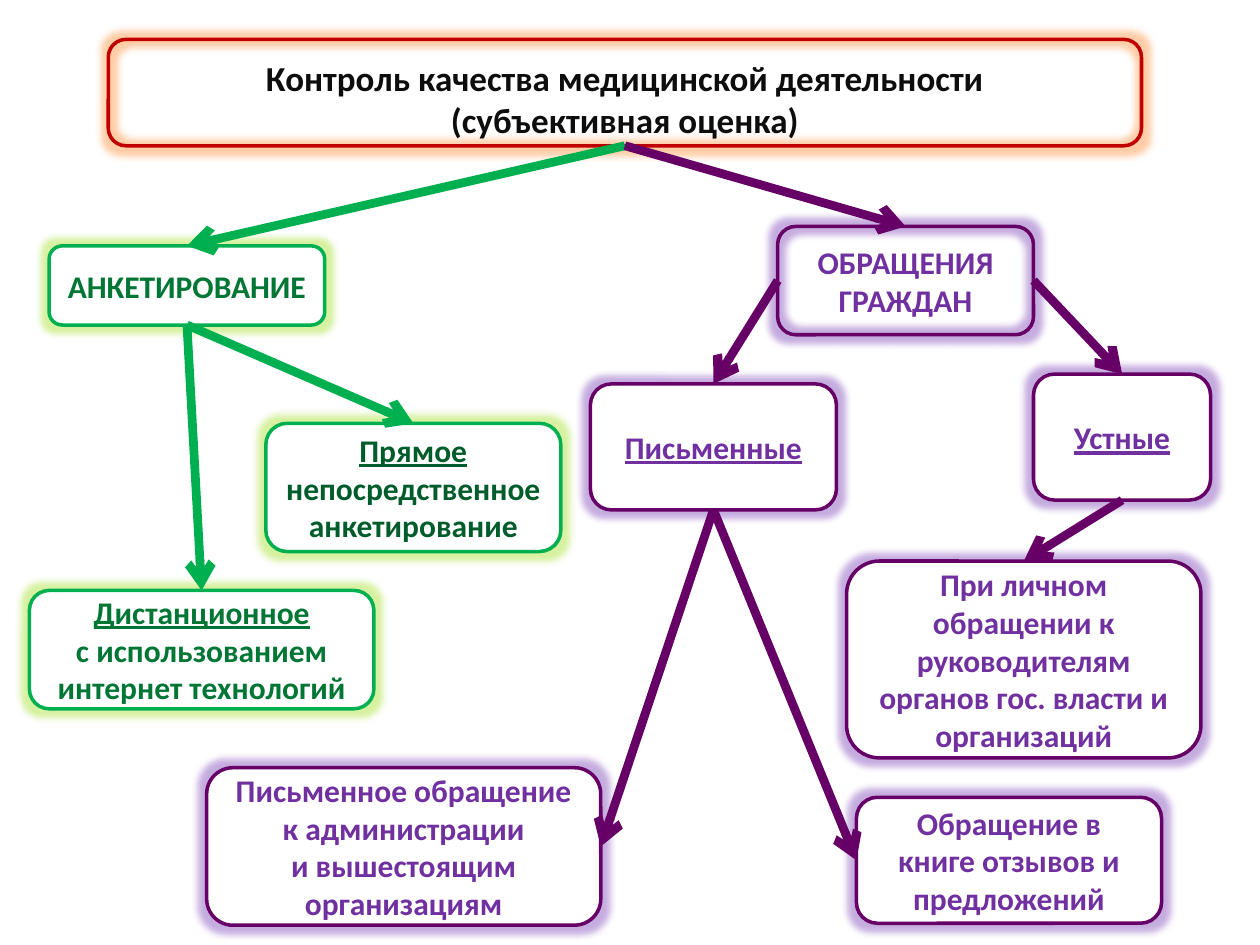
from lxml import etree
from pptx import Presentation
from pptx.dml.color import RGBColor
from pptx.enum.shapes import MSO_CONNECTOR, MSO_SHAPE
from pptx.enum.text import MSO_ANCHOR, PP_ALIGN
from pptx.oxml.ns import qn
from pptx.util import Pt

ROUNDED = MSO_SHAPE.ROUNDED_RECTANGLE
STRAIGHT = MSO_CONNECTOR.STRAIGHT
MIDDLE = MSO_ANCHOR.MIDDLE
CENTER = PP_ALIGN.CENTER
TOP, LEFT, BOTTOM, RIGHT = range(4)

WHITE = RGBColor(0xFF, 0xFF, 0xFF)
BLACK = RGBColor(0x0D, 0x0D, 0x0D)
RED = RGBColor(0xC0, 0x00, 0x00)
GREEN = RGBColor(0x00, 0xB0, 0x50)
PURPLE = RGBColor(0x66, 0x00, 0x66)
GREEN_TEXT = RGBColor(0x00, 0x76, 0x35)
DARK_GREEN_TEXT = RGBColor(0x00, 0x5C, 0x2A)
PURPLE_TEXT = RGBColor(0x70, 0x30, 0xA0)
GLOWS = {
    RED: RGBColor(0xFF, 0x80, 0x20),
    GREEN: RGBColor(0x99, 0xDD, 0x11),
    PURPLE: RGBColor(0x70, 0x30, 0xB0),
}

prs = Presentation()
prs.slide_width, prs.slide_height = Pt(720), Pt(540)
s = prs.slides.add_slide(prs.slide_layouts[6])


def add_box(x, y, w, h, line, color, lines, size=18, underlined=False, filled=True):
    """Add a glowing rounded box; underlined applies to its first line only."""
    sp = s.shapes.add_shape(ROUNDED, Pt(x), Pt(y), Pt(w), Pt(h))
    if filled:
        sp.fill.solid()
        sp.fill.fore_color.rgb = WHITE
    else:
        sp.fill.background()
    sp.line.color.rgb = line
    sp.line.width = Pt(2)
    sp.shadow.inherit = False
    effects = sp._element.spPr.find(qn("a:effectLst"))
    glow = etree.SubElement(effects, qn("a:glow"), rad=str(Pt(8)))
    tint = etree.SubElement(glow, qn("a:srgbClr"), val=str(GLOWS[line]))
    etree.SubElement(tint, qn("a:alpha"), val="40000")
    tf = sp.text_frame
    tf.word_wrap = True
    tf.vertical_anchor = MIDDLE
    for i, text in enumerate(lines):
        p = tf.paragraphs[0] if i == 0 else tf.add_paragraph()
        p.text = text
        p.alignment = CENTER
        p.font.name = "Calibri"
        p.font.size = Pt(size)
        p.font.bold = True
        p.font.underline = underlined and i == 0
        p.font.color.rgb = color
    return sp


def add_arrow(start, start_side, end, end_side, color):
    c = s.shapes.add_connector(STRAIGHT, 0, 0, 0, 0)
    c.begin_connect(start, start_side)
    c.end_connect(end, end_side)
    c.line.color.rgb = color
    c.line.width = Pt(5)
    etree.SubElement(c.line._get_or_add_ln(), qn("a:tailEnd"), type="arrow")
    etree.SubElement(c._element.spPr, qn("a:effectLst"))


title = add_box(61.9, 22.5, 590.4, 60.8, RED, BLACK,
                ["Контроль качества медицинской деятельности",
                 "(субъективная оценка)"], size=20, filled=False)
title.text_frame.margin_top = Pt(10)

survey = add_box(28.1, 140.5, 157.5, 45.2, GREEN, GREEN_TEXT, ["АНКЕТИРОВАНИЕ"])
direct = add_box(151.9, 241.9, 168.6, 73.3, GREEN, DARK_GREEN_TEXT,
                 ["Прямое", "непосредственное анкетирование"], underlined=True)
remote = add_box(16.8, 337.4, 196.8, 67.6, GREEN, GREEN_TEXT,
                 ["Дистанционное", "с использованием интернет технологий"],
                 underlined=True)

appeals = add_box(444.4, 129.4, 146.2, 61.9, PURPLE, PURPLE_TEXT,
                  ["ОБРАЩЕНИЯ", "ГРАЖДАН"], filled=False)
written = add_box(337.4, 219.4, 140.6, 72, PURPLE, PURPLE_TEXT,
                  ["Письменные"], underlined=True)
oral = add_box(590.6, 213.8, 101.2, 72, PURPLE, PURPLE_TEXT,
               ["Устные"], underlined=True)
letter = add_box(118.1, 438.7, 225.2, 90, PURPLE, PURPLE_TEXT,
                 ["Письменное обращение", "к администрации",
                  "и вышестоящим организациям"])
review_book = add_box(489.4, 455.6, 174.4, 72, PURPLE, PURPLE_TEXT,
                      ["Обращение в книге отзывов и предложений"])
in_person = add_box(483.8, 320.6, 202.5, 112.5, PURPLE, PURPLE_TEXT,
                    ["При личном обращении к руководителям "
                     "органов гос. власти и организаций"])

for start, start_side, end, end_side, color in [
    (title, BOTTOM, survey, TOP, GREEN),
    (title, BOTTOM, appeals, TOP, PURPLE),
    (survey, BOTTOM, direct, TOP, GREEN),
    (survey, BOTTOM, remote, TOP, GREEN),
    (appeals, LEFT, written, TOP, PURPLE),
    (appeals, RIGHT, oral, TOP, PURPLE),
    (oral, BOTTOM, in_person, TOP, PURPLE),
    (written, BOTTOM, review_book, LEFT, PURPLE),
    (written, BOTTOM, letter, RIGHT, PURPLE),
]:
    add_arrow(start, start_side, end, end_side, color)

prs.save("out.pptx")
